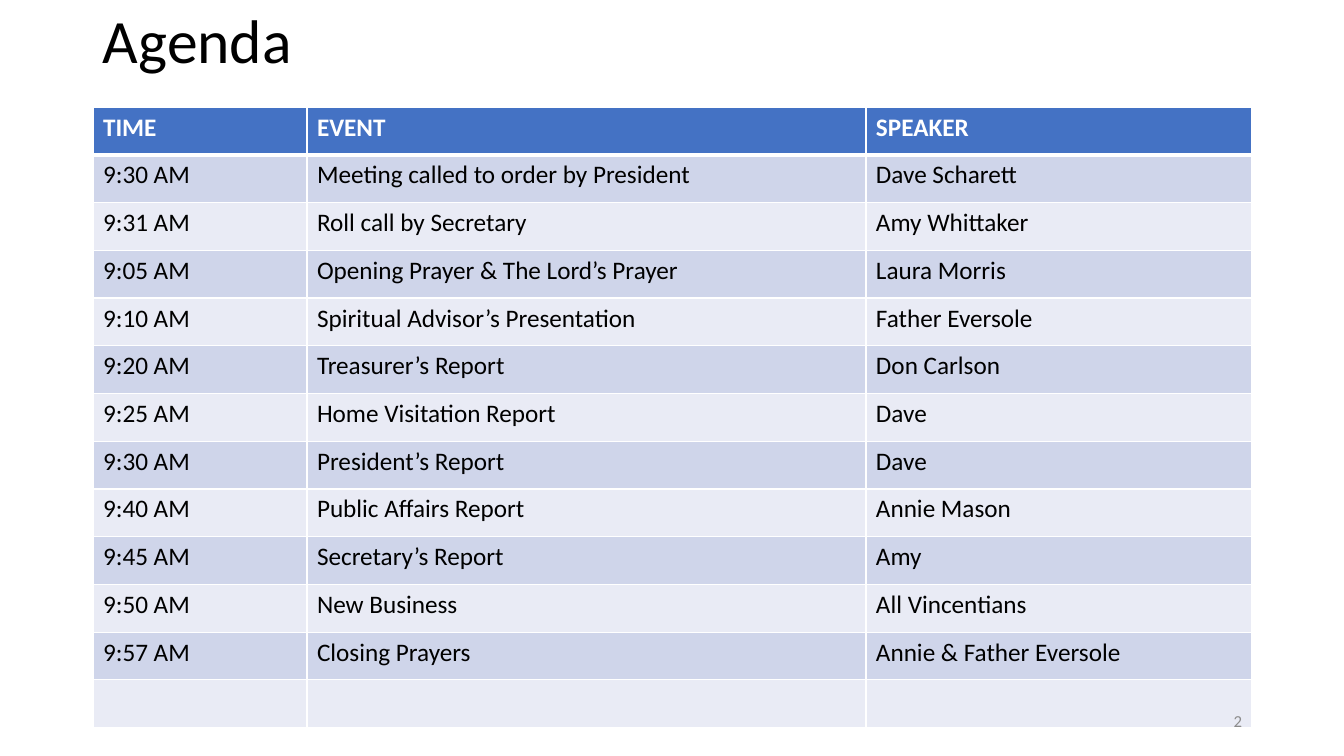
from lxml.etree import SubElement
from pptx import Presentation
from pptx.dml.color import RGBColor
from pptx.enum.text import MSO_ANCHOR, PP_ALIGN
from pptx.oxml import parse_xml
from pptx.oxml.ns import nsdecls
from pptx.util import Emu, Pt

EMU_PER_PX = 914400 / 100.8

AGENDA = [
    ("TIME", "EVENT", "SPEAKER"),
    ("9:30 AM", "Meeting called to order by President", "Dave Scharett"),
    ("9:31 AM", "Roll call by Secretary", "Amy Whittaker"),
    ("9:05 AM", "Opening Prayer & The Lord’s Prayer", "Laura Morris"),
    ("9:10 AM", "Spiritual Advisor’s Presentation", "Father Eversole"),
    ("9:20 AM", "Treasurer’s Report", "Don Carlson"),
    ("9:25 AM", "Home Visitation Report", "Dave"),
    ("9:30 AM", "President’s Report", "Dave"),
    ("9:40 AM", "Public Affairs Report", "Annie Mason"),
    ("9:45 AM", "Secretary’s Report", "Amy"),
    ("9:50 AM", "New Business", "All Vincentians"),
    ("9:57 AM", "Closing Prayers", "Annie & Father Eversole"),
    ("", "", ""),
]


def px(length):
    return Emu(round(length * EMU_PER_PX))


def color(value):
    return RGBColor.from_string(value)


class AgendaPage:
    font = "Calibri"
    ink, white, muted = "000000", "FFFFFF", "8C8C8C"
    header_fill = "4472C4"
    band_fills = ("E9EBF5", "CFD5EA")

    def __init__(self, page):
        self.page = page

    def style(self, paragraph, size, ink, bold=False):
        for span in paragraph.runs:
            span.font.name = self.font
            span.font.size = Pt(size)
            span.font.bold = bold
            span.font.color.rgb = color(ink)

    def text(self, words, left, top, width, height, size, ink,
             align=PP_ALIGN.LEFT, spacing=1.0):
        box = self.page.shapes.add_textbox(px(left), px(top), px(width), px(height))
        frame = box.text_frame
        frame.word_wrap = True
        frame.vertical_anchor = MSO_ANCHOR.MIDDLE
        frame.text = words
        para = frame.paragraphs[0]
        para.alignment = align
        para.line_spacing = spacing
        self.style(para, size, ink)

    def borders(self, cell, top, bottom):
        properties = cell._tc.get_or_add_tcPr()
        widths = {"lnL": 1, "lnR": 1, "lnT": top, "lnB": bottom}
        for position, (side, width) in enumerate(widths.items()):
            line = parse_xml(f'<a:{side} {nsdecls("a")} w="{Pt(width)}"/>')
            namespace = "{" + line.nsmap["a"] + "}"
            fill = SubElement(line, namespace + "solidFill")
            SubElement(fill, namespace + "srgbClr", val=self.white)
            properties.insert(position, line)

    def table(self, rows, left, top, widths, height):
        frame = self.page.shapes.add_table(
            len(rows), len(widths), px(left), px(top), px(sum(widths)), px(height))
        table = frame.table
        for column, width in zip(table.columns, widths):
            column.width = px(width)
        for row, texts in enumerate(rows):
            header = row == 0
            for column, words in enumerate(texts):
                cell = table.cell(row, column)
                cell.text = words
                self.style(cell.text_frame.paragraphs[0], 18,
                           self.white if header else self.ink, header)
                cell.fill.solid()
                cell.fill.fore_color.rgb = color(
                    self.header_fill if header else self.band_fills[row % 2])
                # The heavier rule lies between the header and the first entry
                self.borders(cell, top=3 if row == 1 else 1, bottom=3 if header else 1)


def main():
    deck = Presentation()
    deck.slide_width, deck.slide_height = px(1344), px(756)
    agenda = AgendaPage(deck.slides.add_slide(deck.slide_layouts[6]))

    # Title
    agenda.text("Agenda", 93, 1, 1159, 86, 44, agenda.ink, spacing=0.9)

    # Schedule
    agenda.table(AGENDA, 93, 107, (214, 559, 386), 621)

    # Page number
    agenda.text("2", 950, 701, 302, 40, 12, agenda.muted, align=PP_ALIGN.RIGHT)

    deck.save("out.pptx")


if __name__ == "__main__":
    main()
